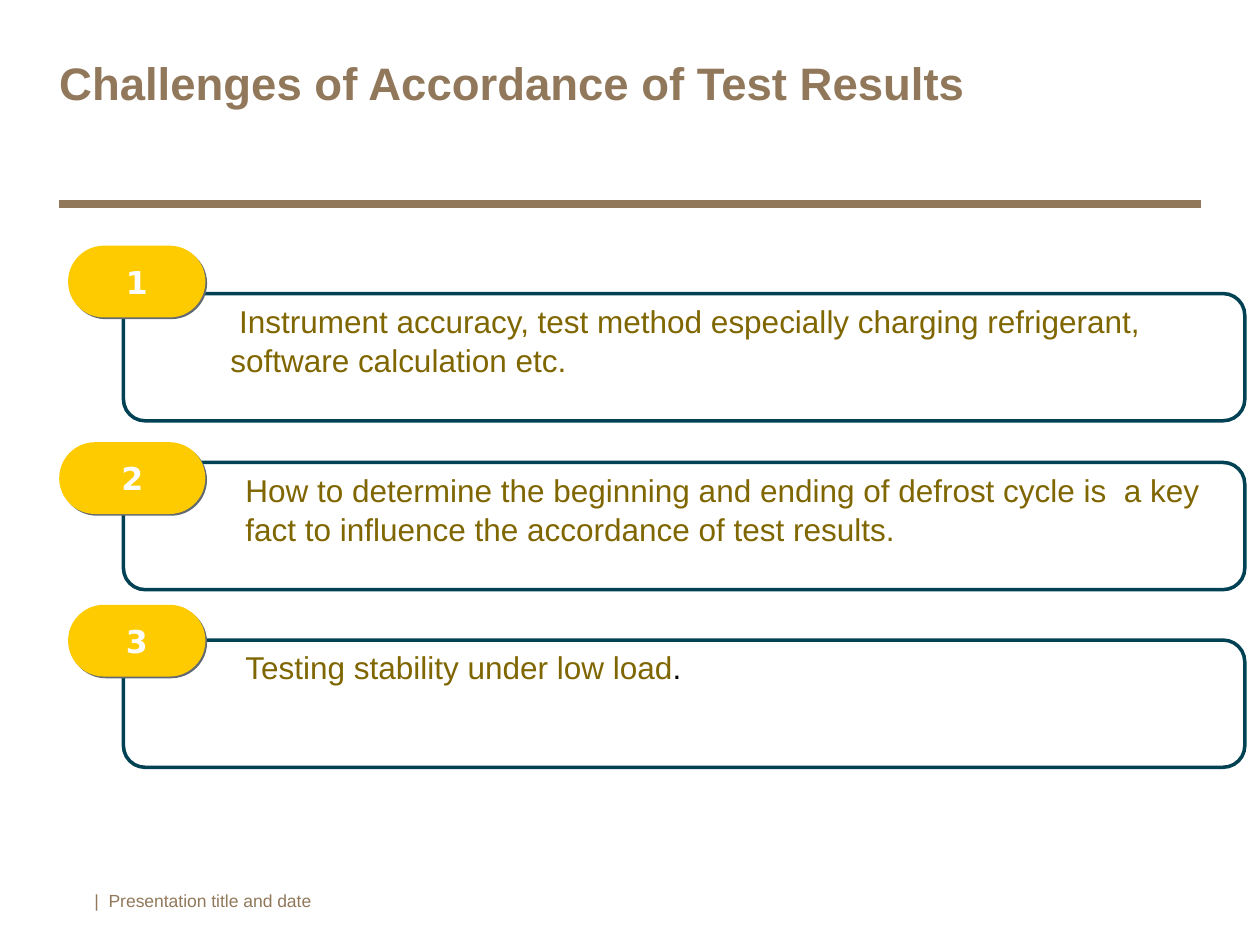
from lxml.etree import SubElement
from pptx import Presentation
from pptx.dml.color import RGBColor
from pptx.enum.shapes import MSO_CONNECTOR, MSO_SHAPE
from pptx.enum.text import MSO_ANCHOR, PP_ALIGN
from pptx.oxml.ns import qn
from pptx.util import Inches, Pt

COLORS = {
    "brown": "91785B", "teal": "004153", "yellow": "FECB00", "olive": "7F6600",
    "shadow": "626971", "pale": "FCFCFC", "white": "FFFFFF", "black": "000000",
}


class SlideBuilder:
    """Holds the style and the current slide, and draws each kind of element."""

    def __init__(self, prs):
        self.s = prs.slides.add_slide(prs.slide_layouts[6])
        self.formats = {
            "title": {"name": "Arial", "size": Pt(26), "bold": True},
            "footer": {"name": "Arial", "size": Pt(10)},
            "body": {"name": "Arial", "size": Pt(18)},
            "number": {"name": "DejaVu Sans", "size": Pt(18), "bold": True},
        }

    def color(self, name):
        return RGBColor.from_string(COLORS[name])

    def run(self, p, text, style, color):
        r = p.add_run()
        r.text = text
        for key, value in self.formats[style].items():
            setattr(r.font, key, value)
        r.font.color.rgb = self.color(color)

    def text(self, box, runs, style, inset=True, spacing=None, indent=0):
        tf = self.s.shapes.add_textbox(*map(Inches, box)).text_frame
        tf.word_wrap = True
        if not inset:
            for side in ("left", "top", "right", "bottom"):
                setattr(tf, f"margin_{side}", 0)
        p = tf.paragraphs[0]
        if spacing:
            p.line_spacing = spacing
        if indent:
            p._p.get_or_add_pPr().set("indent", str(Inches(indent)))
        for text, color in runs:
            self.run(p, text, style, color)

    def rule(self, x1, x2, y, color, width):
        sp = self.s.shapes.add_connector(
            MSO_CONNECTOR.STRAIGHT, Inches(x1), Inches(y), Inches(x2), Inches(y))
        sp.line.color.rgb = self.color(color)
        sp.line.width = Pt(width)
        SubElement(sp._element.spPr, qn("a:effectLst"))

    def rounded(self, box, radius, fill):
        sp = self.s.shapes.add_shape(MSO_SHAPE.ROUNDED_RECTANGLE, *map(Inches, box))
        sp.adjustments[0] = radius
        sp.shadow.inherit = False
        sp.fill.solid()
        sp.fill.fore_color.rgb = self.color(fill)
        return sp

    def panel(self, box):
        sp = self.rounded(box, 0.17, "white")
        sp.line.color.rgb = self.color("teal")
        sp.line.width = Pt(2)

    def badge(self, box, number):
        sp = self.rounded(box, 0.5, "yellow")
        sp.line.fill.background()
        effects = sp._element.spPr.find(qn("a:effectLst"))
        shadow = SubElement(effects, qn("a:outerShdw"), dist=str(Pt(1.4)),
                            dir="2700000", algn="ctr", rotWithShape="0")
        SubElement(shadow, qn("a:srgbClr"), val=COLORS["shadow"])
        tf = sp.text_frame
        tf.vertical_anchor = MSO_ANCHOR.MIDDLE
        p = tf.paragraphs[0]
        p.alignment = PP_ALIGN.CENTER
        self.run(p, str(number), "number", "pale")


def main():
    prs = Presentation()
    prs.slide_width, prs.slide_height = Inches(10), Inches(7.5)
    b = SlideBuilder(prs)
    b.rule(0.47, 9.53, 1.62, "brown", 5)
    b.text((0.47, 0.44, 7.84, 0.93),
           [("Challenges of Accordance of Test Results", "brown")], "title", inset=False)
    b.text((0.75, 7.06, 6.57, 0.3),
           [("|  Presentation title and date", "brown")], "footer", inset=False)

    challenges = [
        (2.33, 1.73, 8.27, 0.07, 0.54, 1.95,
         [("Instrument accuracy, test method especially charging refrigerant, "
           "software calculation etc.", "olive")]),
        (3.67, 1.85, 7.8, 0, 0.47, 3.51,
         [("How to determine the beginning and ending of defrost cycle is  a key "
           "fact to influence the accordance of test results.", "olive")]),
        (5.08, 1.85, 7.8, 0, 0.54, 4.8,
         [("Testing stability under low load", "olive"), (".", "black")]),
    ]
    badge_right = 1.63
    for number, (top, left, width, indent, badge_left, badge_top, runs) in enumerate(challenges, 1):
        b.panel((0.98, top, 8.9, 1.01))
        b.text((left, top, width, 1.01), runs, "body", spacing=1.05, indent=indent)
        b.badge((badge_left, badge_top, badge_right - badge_left, 0.57), number)
    prs.save("out.pptx")


if __name__ == "__main__":
    main()
